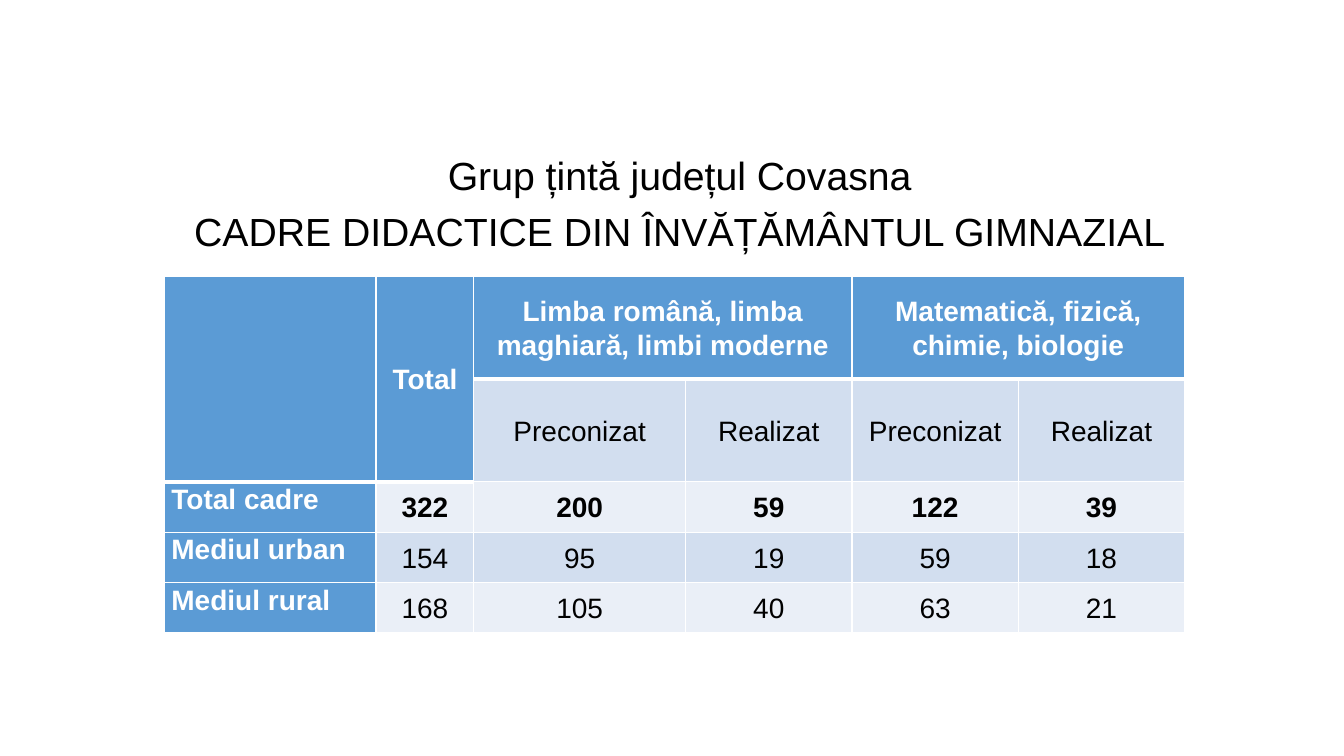
from lxml import etree
from pptx import Presentation
from pptx.dml.color import RGBColor
from pptx.enum.text import MSO_ANCHOR as ANCHOR, PP_ALIGN as ALIGN
from pptx.oxml.ns import qn
from pptx.util import Inches, Pt

WHITE, BLACK = "FFFFFF", "000000"
BLUE, BAND, PALE = "5B9BD5", "D2DEEF", "EAEFF7"
COLS = [2.1, 0.97, 2.1, 1.65, 1.65, 1.65]
ROWS = [1.02, 1.02, 0.5, 0.5, 0.5]
TITLE = ["Grup țintă județul Covasna", "CADRE DIDACTICE DIN ÎNVĂȚĂMÂNTUL GIMNAZIAL"]
DATA = [
    ["", "Total", "Limba română, limba maghiară, limbi moderne", "",
     "Matematică, fizică, chimie, biologie", ""],
    ["", "", "Preconizat", "Realizat", "Preconizat", "Realizat"],
    ["Total cadre", "322", "200", "59", "122", "39"],
    ["Mediul urban", "154", "95", "19", "59", "18"],
    ["Mediul rural", "168", "105", "40", "63", "21"],
]
MERGES = [(0, 0, 1, 0), (0, 1, 1, 1), (0, 2, 0, 3), (0, 4, 0, 5)]


def rgb(color):
    return RGBColor.from_string(color)


def style_paragraph(p, size, color, bold, align, spacing):
    p.alignment, p.line_spacing = align, spacing
    font = p.font
    font.name, font.size, font.bold = "Arial", Pt(size), bold
    font.color.rgb = rgb(color)


def add_title(s, lines):
    tf = s.shapes.add_textbox(Inches(0.93), Inches(1.5), Inches(11.5), Inches(1.2)).text_frame
    tf.word_wrap = True
    tf.margin_left = Inches(0.22)
    for i, line in enumerate(lines):
        p = tf.add_paragraph() if i else tf.paragraphs[0]
        p.text = line
        if i:
            p.space_before = Pt(10)
        style_paragraph(p, 28, BLACK, False, ALIGN.CENTER, 0.9)


def set_borders(cell, widths):
    tc_pr = cell._tc.get_or_add_tcPr()
    for i, (side, width) in enumerate(widths.items()):
        ln = etree.Element(qn(f"a:ln{side}"), w=str(Pt(width)))
        fill = etree.SubElement(ln, qn("a:solidFill"))
        etree.SubElement(fill, qn("a:srgbClr"), val=WHITE)
        tc_pr.insert(i, ln)


def fill_cell(cell, row, col, text):
    header_rows = 2 if col < 2 else 1
    is_header = row < header_rows or col == 0
    is_label = row >= header_rows and col == 0
    cell.fill.solid()
    cell.fill.fore_color.rgb = rgb(BLUE if is_header else BAND if row % 2 else PALE)
    cell.margin_left = cell.margin_right = Inches(0.07)
    cell.margin_top = cell.margin_bottom = 0
    cell.vertical_anchor = ANCHOR.TOP if is_label else ANCHOR.MIDDLE
    set_borders(cell, {"L": 1, "R": 1, "T": 3 if row == header_rows else 1,
                       "B": 3 if row < header_rows else 1})
    if text:
        cell.text = text
        style_paragraph(cell.text_frame.paragraphs[0], 20, WHITE if is_header else BLACK,
                        is_header or row == 2, ALIGN.LEFT if is_label else ALIGN.CENTER, 1.07)


def add_data_table(s):
    table = s.shapes.add_table(len(ROWS), len(COLS), Inches(1.63), Inches(2.74),
                               Inches(sum(COLS)), Inches(sum(ROWS))).table
    for column, width in zip(table.columns, COLS):
        column.width = Inches(width)
    for row, height in zip(table.rows, ROWS):
        row.height = Inches(height)
    for r, values in enumerate(DATA):
        for c, text in enumerate(values):
            fill_cell(table.cell(r, c), r, c, text)
    for top, left, bottom, right in MERGES:
        table.cell(top, left).merge(table.cell(bottom, right))


def main():
    prs = Presentation()
    prs.slide_width, prs.slide_height = Inches(13.33), Inches(7.5)
    s = prs.slides.add_slide(prs.slide_layouts[6])
    add_title(s, TITLE)
    add_data_table(s)
    prs.save("out.pptx")


if __name__ == "__main__":
    main()
